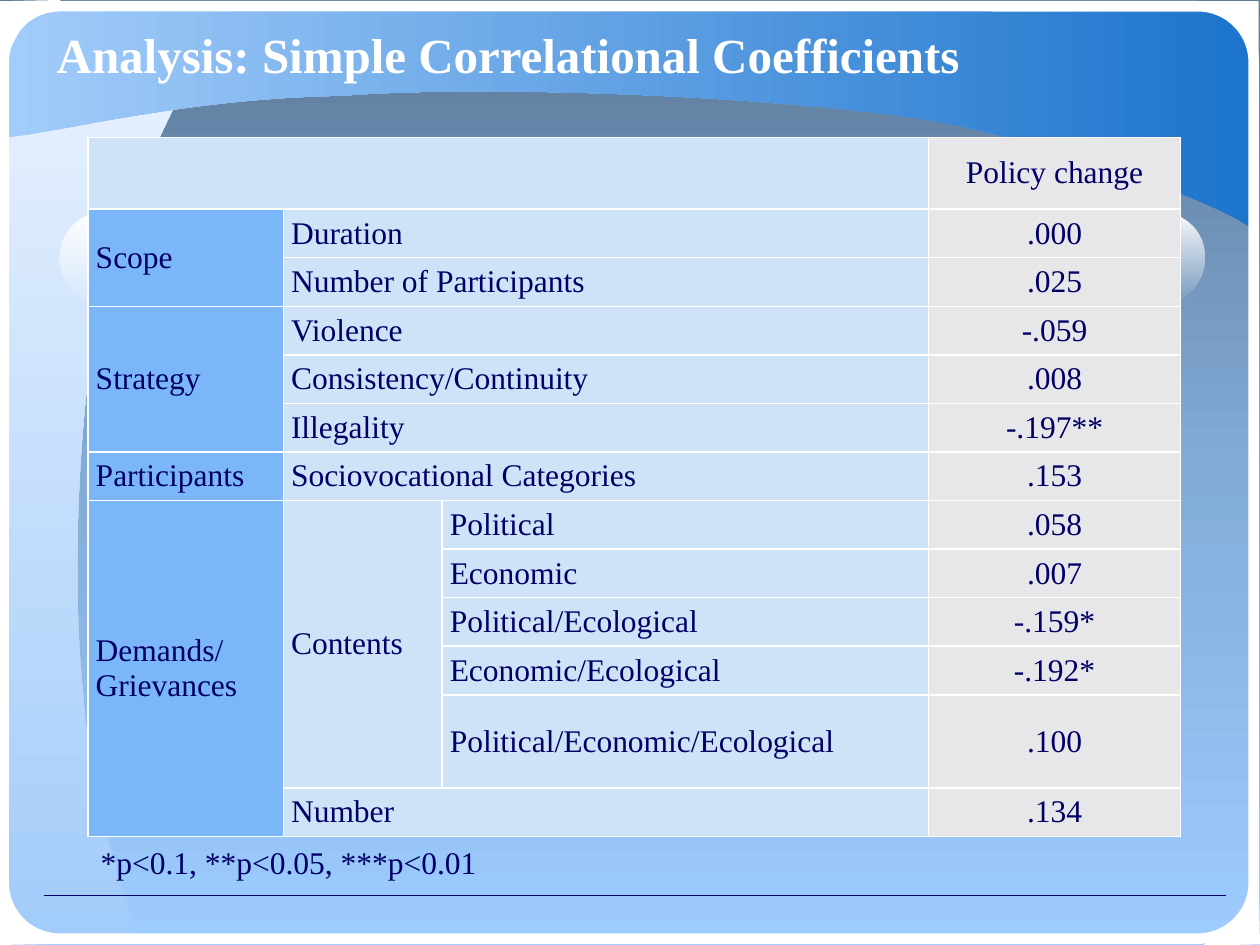
from lxml.etree import SubElement
from pptx import Presentation
from pptx.dml.color import RGBColor
from pptx.enum.shapes import MSO_CONNECTOR, MSO_SHAPE
from pptx.enum.text import MSO_ANCHOR, MSO_AUTO_SIZE, PP_ALIGN
from pptx.oxml.ns import qn
from pptx.util import Inches, Pt

W, H = 10, 7.5
COLORS = {
    "ink": "000066", "white": "FFFFFF",
    "group": "7BB7F8", "label": "CEE3F8", "value": "E7E7EA",
    "bg_top": "5C7998", "bg_mid": "83ACD8", "bg_end": "9DCCFF",
    "pale": "EAF2FE", "sky": "A2CCFA", "deep": "1C74CC",
}
FONT = "Times New Roman"
BODY = {"name": FONT, "size": Pt(18)}
TITLE = {"name": FONT, "size": Pt(28), "bold": True}

# Outlines: a pair is a line end, three pairs are a Bezier curve
SIDE_SWEEP = [(1.07, 7.42), ((1, 7.1), (0.71, 6.34), (0.66, 5.5)),
              ((0.57, 4.66), (0.61, 3.28), (0.8, 2.37)),
              ((1, 1.51), (1.65, 0.26), (1.79, 0.17)), (0.06, 0.17), (0.05, 7.42)]
TOP_SWEEP = [(0.07, 1.09), ((0.51, 1.04), (1.49, 0.78), (2.71, 0.76)),
             ((3.86, 0.67), (6.12, 0.76), (7.36, 0.95)),
             ((8.54, 1.16), (9.82, 1.68), (9.94, 1.82)), (9.95, 0.08), (0.07, 0.07)]
CORNERS = [
    [(0.48, 7.49), (0.19, 7.35), (0.05, 7.2), (0, 6.98), (0, 7.5)],
    [(0, 0.55), ((0.04, 0.49), (0.13, 0.26), (0.21, 0.17)),
     ((0.28, 0.08), (0.5, 0.04), (0.48, 0)), (0, 0.01)],
    [(9.99, 7), (9.87, 7.25), (9.71, 7.41), (9.56, 7.5), (10, 7.49)],
    [(9.51, 0.01), ((9.56, 0.03), (9.72, 0.02), (9.86, 0.17)),
     ((9.99, 0.32), (9.97, 0.6), (9.99, 0.57)), (9.99, 0.01)],
]

# Table: group, label, sublabel, value; None continues a merged cell
ROWS = [
    (None, None, None, "Policy change"),
    ("Scope", "Duration", None, ".000"),
    (None, "Number of Participants", None, ".025"),
    ("Strategy", "Violence", None, "-.059"),
    (None, "Consistency/Continuity", None, ".008"),
    (None, "Illegality", None, "-.197**"),
    ("Participants", "Sociovocational Categories", None, ".153"),
    ("Demands/\nGrievances", "Contents", "Political", ".058"),
    (None, None, "Economic", ".007"),
    (None, None, "Political/Ecological", "-.159*"),
    (None, None, "Economic/Ecological", "-.192*"),
    (None, None, "Political/Economic/Ecological", ".100"),
    (None, "Number", None, ".134"),
]
COL_WIDTHS = [1.55, 1.26, 3.86, 2]
TABLE_BOX = (0.7, 1.09, 8.67, 5.55)
TALL_ROWS = {0: 0.57, 11: 0.74}


def rgb(key):
    return RGBColor.from_string(COLORS[key])


def box(*lengths):
    return [Inches(v) for v in lengths]


def format_text(tf, fmt, color, align=PP_ALIGN.LEFT):
    for p in tf.paragraphs:
        p.alignment = align
        for r in p.runs:
            for key, value in fmt.items():
                setattr(r.font, key, value)
            r.font.color.rgb = rgb(color)


def set_gradient(fill, element, stops, angle):
    """Stops are (position, colour key, opacity); the angle is counter-clockwise."""
    fill.gradient()
    fill.gradient_angle = angle
    gs_list = next(element.iter(qn("a:gsLst")))
    for gs in list(gs_list):
        gs_list.remove(gs)
    for pos, key, opacity in stops:
        gs = SubElement(gs_list, qn("a:gs"), pos=str(pos * 1000))
        clr = SubElement(gs, qn("a:srgbClr"), val=COLORS[key])
        if opacity < 100:
            SubElement(clr, qn("a:alpha"), val=str(opacity * 1000))


def add_outline(s, outline):
    points = []
    for part in outline:
        points += part if len(part) == 3 else [part]
    points = [box(*pt) for pt in points]
    builder = s.shapes.build_freeform(*points[0])
    builder.add_line_segments(points[1:], close=False)
    sp = builder.convert_to_shape()
    # Join the three segments of each curve into one Bezier
    segments = iter(list(sp.element.iter(qn("a:lnTo"))))
    for part in outline[1:]:
        segment = next(segments)
        if len(part) == 3:
            segment.tag = qn("a:cubicBezTo")
            for _ in range(2):
                extra = next(segments)
                segment.append(extra[0])
                extra.getparent().remove(extra)
    sp.shadow.inherit = False
    sp.line.fill.background()
    return sp


def add_round_rect(s, lengths, adj):
    sp = s.shapes.add_shape(MSO_SHAPE.ROUNDED_RECTANGLE, *box(*lengths))
    sp.adjustments[0] = adj
    sp.shadow.inherit = False
    return sp


def set_line(line, color, width):
    line.color.rgb = rgb(color)
    line.width = Pt(width)


def add_backdrop(s):
    set_gradient(s.background.fill, s.element,
                 [(0, "bg_top", 100), (50, "bg_mid", 100), (100, "bg_end", 100)], 270)
    # Sweeps
    for outline, end, angle in ((SIDE_SWEEP, "pale", 90), (TOP_SWEEP, "deep", 0)):
        sp = add_outline(s, outline)
        set_gradient(sp.fill, sp.element, [(0, "sky", 100), (100, end, 100)], angle)
    # Footer rule
    rule = s.shapes.add_connector(MSO_CONNECTOR.STRAIGHT, *box(0.35, 7.11, 9.73, 7.11))
    set_line(rule.line, "ink", 0.75)
    SubElement(rule.element.spPr, qn("a:effectLst"))
    # White frame and corners
    frame = add_round_rect(s, (0.03, 0.05, 9.92, 7.4), 0.06)
    frame.fill.background()
    set_line(frame.line, "white", 6)
    corners = [add_outline(s, outline) for outline in CORNERS]
    for sp in corners:
        sp.fill.solid()
        sp.fill.fore_color.rgb = rgb("white")
    set_line(corners[2].line, "white", 0.75)


def add_title(s, text):
    title = s.shapes.title
    title.left, title.top, title.width, title.height = box(0.35, 0.13, 9.21, 0.59)
    tf = title.text_frame
    tf.text = text
    tf.auto_size = MSO_AUTO_SIZE.NONE
    tf.vertical_anchor = MSO_ANCHOR.MIDDLE
    format_text(tf, TITLE, "white")
    # Bring the title in front of the backdrop
    s.shapes._spTree.append(title.element)


def add_highlight(s):
    sp = add_round_rect(s, (0.47, 1.68, 9.09, 0.73), 0.5)
    sp.line.fill.background()
    set_gradient(sp.fill, sp.element, [(0, "white", 100), (100, "white", 0)], 270)


def format_cell(cell, fill, align):
    cell.margin_left = cell.margin_right = Inches(0.06)
    cell.margin_top = cell.margin_bottom = Inches(0.02)
    cell.vertical_anchor = MSO_ANCHOR.MIDDLE
    tc_pr = cell._tc.get_or_add_tcPr()
    for side in ("lnL", "lnR", "lnT", "lnB"):
        ln = SubElement(tc_pr, qn(f"a:{side}"), w=str(Pt(1)))
        SubElement(SubElement(ln, qn("a:solidFill")), qn("a:srgbClr"), val=COLORS["white"])
    cell.fill.solid()
    cell.fill.fore_color.rgb = rgb(fill)
    format_text(cell.text_frame, BODY, "ink", align)


def add_coefficients(s):
    table = s.shapes.add_table(len(ROWS), len(COL_WIDTHS), *box(*TABLE_BOX)).table
    table.first_row = table.horz_banding = False
    for col, width in zip(table.columns, COL_WIDTHS):
        col.width = Inches(width)
    plain = (TABLE_BOX[3] - sum(TALL_ROWS.values())) / (len(ROWS) - len(TALL_ROWS))
    for i, row in enumerate(ROWS):
        table.rows[i].height = Inches(TALL_ROWS.get(i, plain))
        for j, text in enumerate(row):
            cell = table.cell(i, j)
            if text:
                cell.text = text
            fill = "value" if j == 3 else "group" if j == 0 and i else "label"
            format_cell(cell, fill, PP_ALIGN.CENTER if j == 3 else PP_ALIGN.LEFT)
    # Merged cells: first and last corner
    wide = [((i, 1), (i, 2)) for i, row in enumerate(ROWS) if row[1] and not row[2]]
    tall = [((1, 0), (2, 0)), ((3, 0), (5, 0)), ((7, 0), (12, 0)), ((7, 1), (11, 1))]
    for first, last in [((0, 0), (0, 2))] + wide + tall:
        table.cell(*first).merge(table.cell(*last))


def add_note(s, text):
    tf = s.shapes.add_textbox(*box(0.7, 6.64, 3.22, 0.4)).text_frame
    tf.text = text
    tf.word_wrap = False
    tf.vertical_anchor = MSO_ANCHOR.MIDDLE
    format_text(tf, BODY, "ink")


def main():
    prs = Presentation()
    prs.slide_width, prs.slide_height = box(W, H)
    s = prs.slides.add_slide(prs.slide_layouts[5])
    add_backdrop(s)
    add_title(s, "Analysis: Simple Correlational Coefficients")
    add_highlight(s)
    add_coefficients(s)
    add_note(s, "*p<0.1, **p<0.05, ***p<0.01")
    prs.save("out.pptx")


if __name__ == "__main__":
    main()
